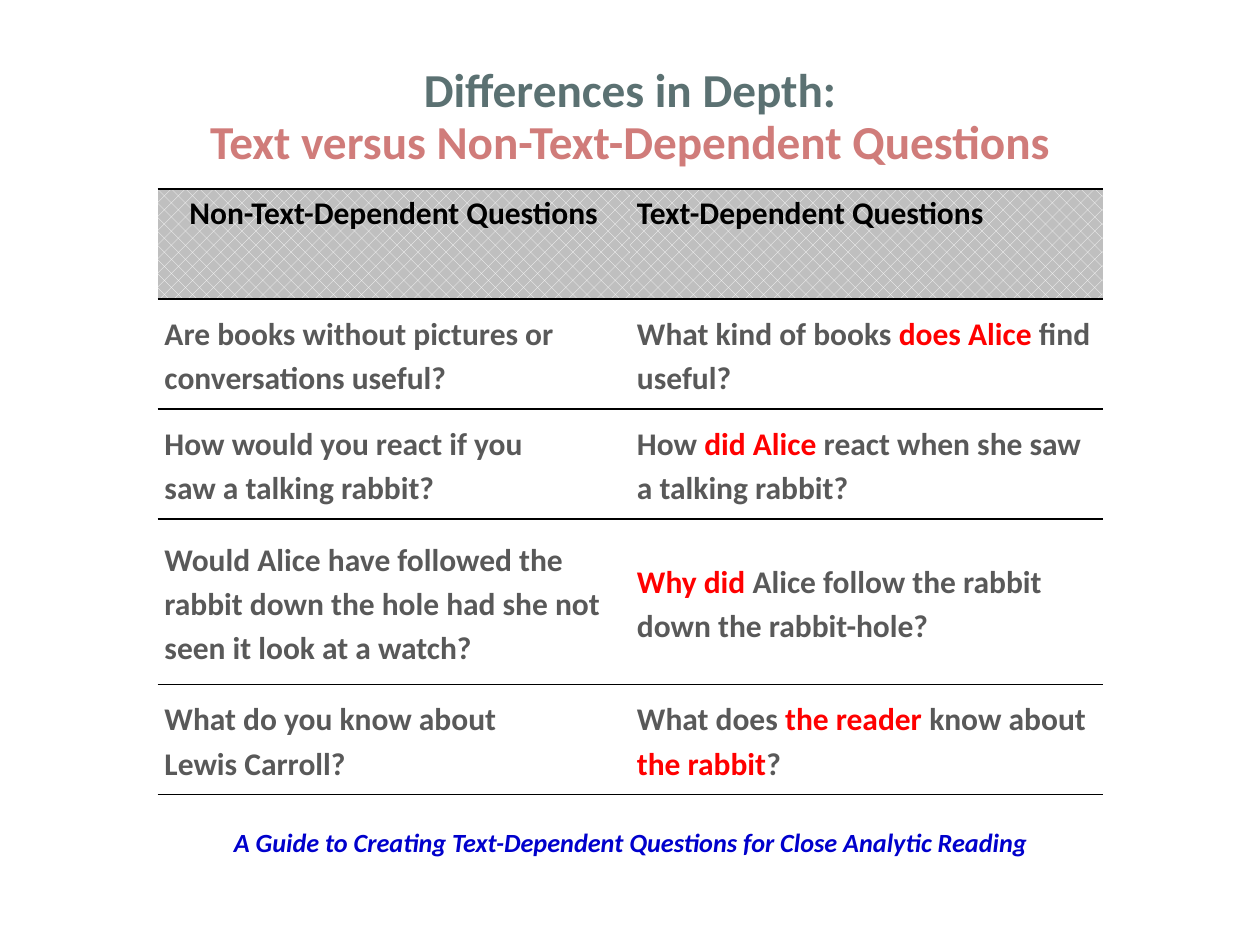
from lxml.etree import SubElement
from pptx import Presentation
from pptx.dml.color import RGBColor
from pptx.enum.dml import MSO_PATTERN
from pptx.enum.text import MSO_ANCHOR as Anchor, MSO_AUTO_SIZE as AutoSize, PP_ALIGN as Align
from pptx.oxml.ns import qn
from pptx.util import Pt

COLORS = {
    "teal": "5B7172", "rose": "D07C7A", "ink": "000000", "gray": "595959",
    "accent": "FF0000", "blue": "0000CC", "white": "FFFFFF", "header": "BFBFBF",
}
HEADERS = ["Non-Text-Dependent Questions", "Text-Dependent Questions"]
# Each cell is a list of paragraphs; spans between asterisks are highlighted.
QUESTIONS = [
    (["Are books without pictures or conversations useful?"],
     ["What kind of books *does Alice *find useful?"]),
    (["How would you react if you", "saw a talking rabbit?"],
     ["How *did Alice *react when she saw a talking rabbit?"]),
    (["Would Alice have followed the rabbit down the hole had she not seen it look at a watch?"],
     ["*Why did *Alice follow the rabbit down the rabbit-hole?"]),
    (["What do you know about", "Lewis Carroll?"],
     ["What does *the reader *know about *the rabbit*?"]),
]
ROW_HEIGHTS = [62.9, 62.9, 62.9, 94.5, 62.9]
RULE_WIDTHS = [1, 1, 1, 1, 0.5, 0.5]


def color(name):
    return RGBColor.from_string(COLORS[name])


def set_font(font, size, name):
    font.name = "Calibri"
    font.size = Pt(size)
    font.bold = True
    font.color.rgb = color(name)


def set_insets(target, side, end):
    target.margin_left = target.margin_right = Pt(side)
    target.margin_top = target.margin_bottom = Pt(end)


def place(shape, box):
    shape.left, shape.top, shape.width, shape.height = (Pt(value) for value in box)


def add_title(page, box):
    title = page.shapes.title
    place(title, box)
    frame = title.text_frame
    frame.word_wrap = True
    frame.auto_size = AutoSize.NONE
    frame.vertical_anchor = Anchor.MIDDLE
    set_insets(frame, 5, 3)
    frame.text = "Differences in Depth:\nText versus Non-Text-Dependent Questions"
    for para, name in zip(frame.paragraphs, ("teal", "rose")):
        para.alignment = Align.CENTER
        para.line_spacing = 0.9
        para.space_before = Pt(0)
        set_font(para.font, 27, name)


def set_borders(cell, top, bottom):
    props = cell._tc.get_or_add_tcPr()
    for side, width in (("L", 0), ("R", 0), ("T", top), ("B", bottom)):
        line = SubElement(props, qn(f"a:ln{side}"), w=str(Pt(width)))
        if width:
            fill = SubElement(line, qn("a:solidFill"))
            SubElement(fill, qn("a:srgbClr"), val=COLORS["ink"])
        else:
            SubElement(line, qn("a:noFill"))


def fill_cell(cell, lines, name):
    set_insets(cell, 4, 0)
    cell.text = "\n".join(line.replace("*", "") for line in lines)
    for para, line in zip(cell.text_frame.paragraphs, lines):
        para.line_spacing = 1.15
        set_font(para.font, 18, name)
        if "*" in line:
            para.clear()
            for index, part in enumerate(line.split("*")):
                if part:
                    span = para.add_run()
                    span.text = part
                    set_font(span.font, 18, "accent" if index % 2 else name)


def add_question_table(page, box):
    rows = [[[header] for header in HEADERS], *QUESTIONS]
    table = page.shapes.add_table(len(rows), 2, *(Pt(value) for value in box)).table
    table.first_row = table.horz_banding = False
    for column in table.columns:
        column.width = Pt(box[2] / 2)
    for row, texts in enumerate(rows):
        table.rows[row].height = Pt(ROW_HEIGHTS[row])
        for column, lines in enumerate(texts):
            cell = table.cell(row, column)
            fill_cell(cell, lines, "gray" if row else "ink")
            set_borders(cell, RULE_WIDTHS[row], RULE_WIDTHS[row + 1])
            if row:
                cell.vertical_anchor = Anchor.MIDDLE
                cell.fill.background()
            else:
                cell.fill.patterned()
                cell.fill.pattern = MSO_PATTERN.PERCENT_25
                cell.fill.fore_color.rgb = color("white")
                cell.fill.back_color.rgb = color("header")
    table.cell(0, 0).text_frame.paragraphs[0].alignment = Align.CENTER


def add_source_note(page, box):
    frame = page.shapes.add_textbox(*(Pt(value) for value in box)).text_frame
    frame.word_wrap = False
    frame.auto_size = AutoSize.SHAPE_TO_FIT_TEXT
    para = frame.paragraphs[0]
    para.text = "A Guide to Creating Text-Dependent Questions for Close Analytic Reading"
    set_font(para.font, 15, "blue")
    para.font.italic = True


def main():
    deck = Presentation()
    deck.slide_width, deck.slide_height = Pt(720), Pt(540)
    page = deck.slides.add_slide(deck.slide_layouts[5])
    add_title(page, (90, 27, 540, 81))
    add_question_table(page, (90, 108, 540, sum(ROW_HEIGHTS)))
    add_source_note(page, (126.5, 468.5, 472, 25.5))
    deck.save("out.pptx")


if __name__ == "__main__":
    main()
